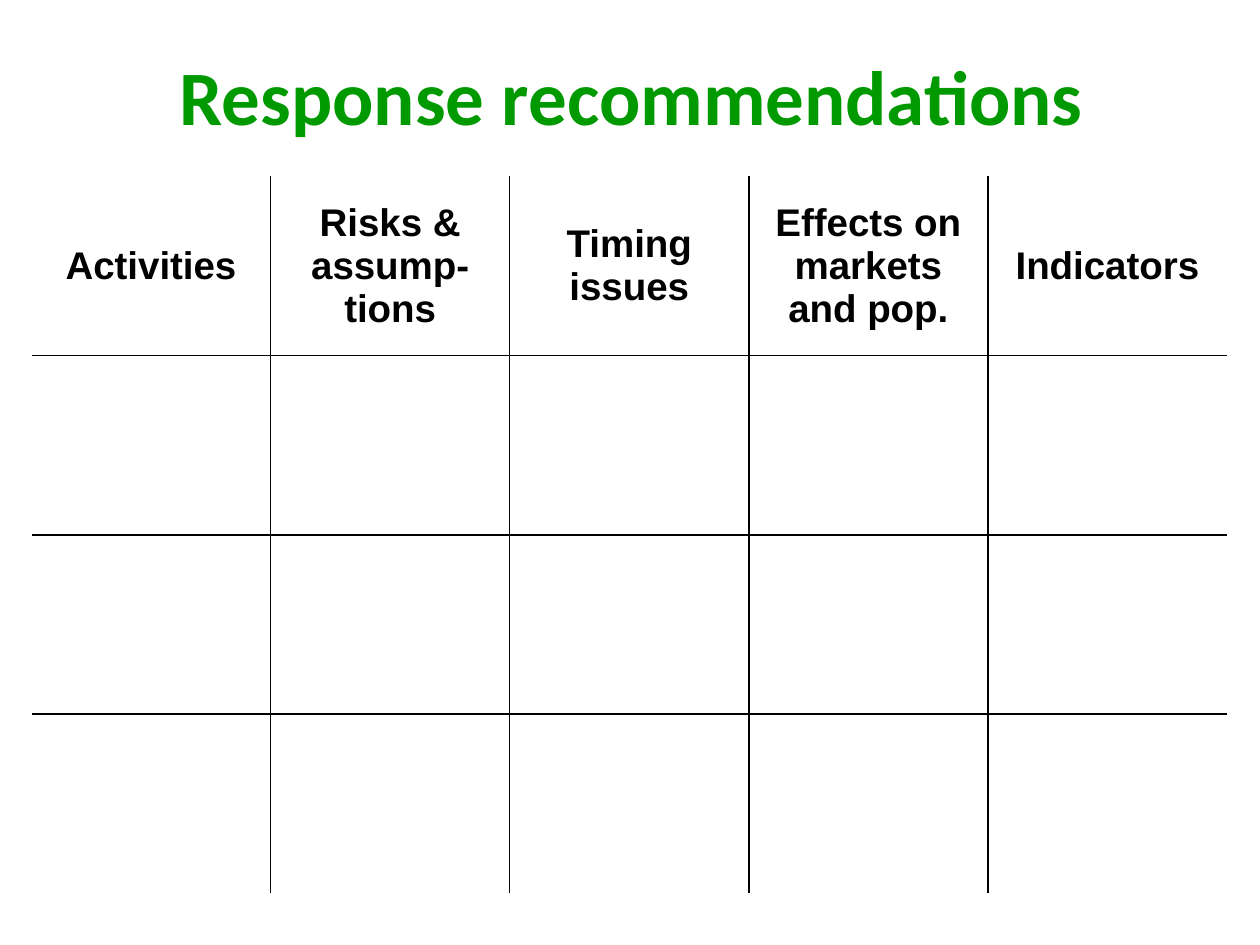
from dataclasses import dataclass

from lxml.etree import SubElement
from pptx import Presentation
from pptx.dml.color import RGBColor
from pptx.enum.text import MSO_ANCHOR as Anchor, PP_ALIGN as Align
from pptx.oxml.ns import qn
from pptx.util import Inches, Pt


@dataclass(frozen=True)
class Theme:
    title_color: str = "009900"
    text_color: str = "000000"
    line_color: str = "000000"
    title_font: str = "Calibri"
    table_font: str = "Arial"
    title_size: int = 44
    header_size: int = 22
    line_width: int = 1


THEME = Theme()
HEADERS = ["Activities", "Risks & assump-tions", "Timing issues",
           "Effects on markets and pop.", "Indicators"]
ROW_COUNT = 4


def write_text(frame, text, *, font, size, color, bold=True, align=Align.CENTER):
    frame.word_wrap = True
    paragraph = frame.paragraphs[0]
    paragraph.alignment = align
    run = paragraph.add_run()
    run.text = text
    run.font.name = font
    run.font.size = Pt(size)
    run.font.bold = bold
    run.font.color.rgb = RGBColor.from_string(color)


def set_borders(cell, visible_sides):
    """Draw the named sides (L, R, T, B) and leave the others open."""
    properties = cell._tc.get_or_add_tcPr()
    for side in "LRTB":
        line = SubElement(properties, qn(f"a:ln{side}"), w=str(Pt(THEME.line_width)))
        if side in visible_sides:
            fill = SubElement(line, qn("a:solidFill"))
            SubElement(fill, qn("a:srgbClr"), val=THEME.line_color)
        else:
            SubElement(line, qn("a:noFill"))


def add_title(slide, text):
    box = slide.shapes.add_textbox(Inches(0.14), Inches(0.25), Inches(9.75), Inches(1))
    box.text_frame.vertical_anchor = Anchor.MIDDLE
    write_text(box.text_frame, text, font=THEME.title_font,
               size=THEME.title_size, color=THEME.title_color)


def add_grid(slide, headers, row_count):
    column_count = len(headers)
    table = slide.shapes.add_table(row_count, column_count, Inches(0.25), Inches(1.4),
                                   Inches(9.49), Inches(5.69)).table
    table.first_row = False
    table.horz_banding = False

    # Only the inner grid lines show
    for row in range(row_count):
        for column in range(column_count):
            inner = {"L": column > 0, "R": column < column_count - 1,
                     "T": row > 0, "B": row < row_count - 1}
            cell = table.cell(row, column)
            set_borders(cell, [side for side, shown in inner.items() if shown])
            cell.fill.background()

    # Header row
    for column, header in enumerate(headers):
        cell = table.cell(0, column)
        cell.vertical_anchor = Anchor.MIDDLE
        write_text(cell.text_frame, header, font=THEME.table_font,
                   size=THEME.header_size, color=THEME.text_color)


def main():
    presentation = Presentation()
    presentation.slide_width = Inches(10)
    presentation.slide_height = Inches(7.5)
    slide = presentation.slides.add_slide(presentation.slide_layouts[6])
    add_title(slide, "Response recommendations")
    add_grid(slide, HEADERS, ROW_COUNT)
    presentation.save("out.pptx")


if __name__ == "__main__":
    main()
